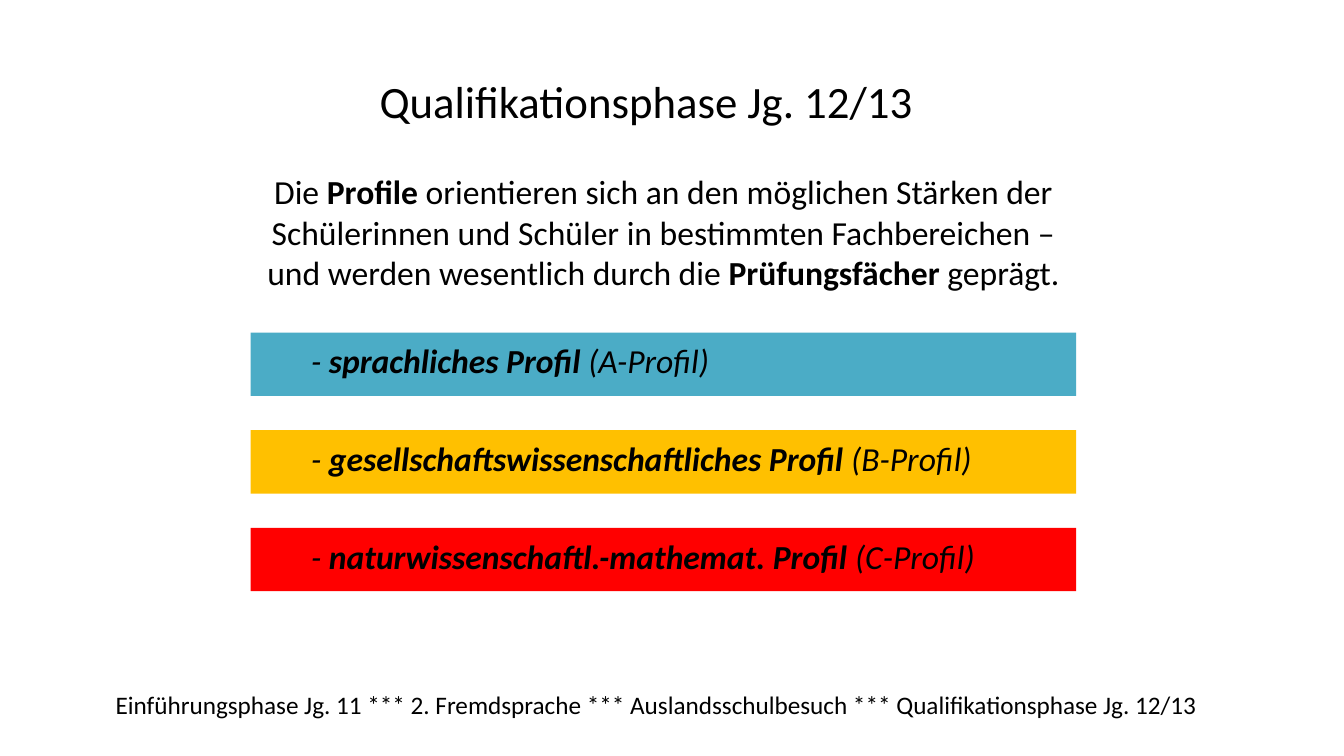
from dataclasses import dataclass

from pptx import Presentation
from pptx.dml.color import RGBColor
from pptx.enum.shapes import MSO_SHAPE as Preset
from pptx.enum.text import MSO_ANCHOR as Anchor, PP_ALIGN as Align
from pptx.util import Cm, Pt

COLORS = {
    "text": "000000",
    "language": "4BACC6",
    "society": "FFC000",
    "science": "FF0000",
}
FONT = "Calibri"
LEFT, WIDTH = 6.32, 20.8
BAR_TOP, BAR_HEIGHT, BAR_STEP = 8.38, 1.6, 2.46


@dataclass
class Profile:
    name: str
    label: str
    color: str


@dataclass
class TextBlock:
    left: float
    top: float
    width: float
    height: float
    size: int
    spans: list[tuple[str, bool]]


PROFILES = [
    Profile("sprachliches Profil ", "(A-Profil)", "language"),
    Profile("gesellschaftswissenschaftliches Profil ", "(B-Profil)", "society"),
    Profile("naturwissenschaftl.-mathemat. Profil ", "(C-Profil)", "science"),
]

TEXT_BLOCKS = [
    # Title
    TextBlock(5.23, 1.73, 22.12, 1.6, 32, [("Qualifikationsphase Jg. 12/13", False)]),
    # Introduction
    TextBlock(LEFT, 4.19, WIDTH, 3.3, 24, [
        ("Die ", False),
        ("Profile", True),
        (" orientieren sich an den möglichen Stärken der Schülerinnen und Schüler "
         "in bestimmten Fachbereichen – und werden wesentlich durch die ", False),
        ("Prüfungsfächer", True),
        (" geprägt.", False),
    ]),
    # Footer
    TextBlock(2.49, 17.25, 28.24, 1.02, 18, [
        ("Einführungsphase Jg. 11 *** 2. Fremdsprache *** Auslandsschulbesuch *** "
         "Qualifikationsphase Jg. 12/13 ", False),
    ]),
]


def add_span(para, text: str, *, size: int, bold: bool = False, italic: bool = False) -> None:
    span = para.add_run()
    span.text = text
    font = span.font
    font.name, font.size = FONT, Pt(size)
    font.bold, font.italic = bold, italic
    font.color.rgb = RGBColor.from_string(COLORS["text"])


def add_text_block(page, block: TextBlock) -> None:
    box = page.shapes.add_textbox(
        Cm(block.left), Cm(block.top), Cm(block.width), Cm(block.height))
    box.text_frame.word_wrap = True
    para = box.text_frame.paragraphs[0]
    para.alignment = Align.CENTER
    for text, bold in block.spans:
        add_span(para, text, size=block.size, bold=bold)


def add_profile_bar(page, profile: Profile, top: float) -> None:
    bar = page.shapes.add_shape(
        Preset.RECTANGLE, Cm(LEFT), Cm(top), Cm(WIDTH), Cm(BAR_HEIGHT))
    bar.shadow.inherit = False
    bar.fill.solid()
    bar.fill.fore_color.rgb = RGBColor.from_string(COLORS[profile.color])
    bar.line.fill.background()
    frame = bar.text_frame
    frame.word_wrap = True
    frame.vertical_anchor = Anchor.TOP
    para = frame.paragraphs[0]
    para.alignment = Align.LEFT
    add_span(para, "\t", size=26, bold=True)
    add_span(para, "- ", size=24, italic=True)
    add_span(para, profile.name, size=24, bold=True, italic=True)
    add_span(para, profile.label, size=24, italic=True)


def main() -> None:
    deck = Presentation()
    deck.slide_width, deck.slide_height = Cm(33.87), Cm(19.05)
    page = deck.slides.add_slide(deck.slide_layouts[6])

    for block in TEXT_BLOCKS:
        add_text_block(page, block)

    # Profile bars, evenly spaced
    for index, profile in enumerate(PROFILES):
        add_profile_bar(page, profile, BAR_TOP + index * BAR_STEP)

    deck.save("out.pptx")


if __name__ == "__main__":
    main()
